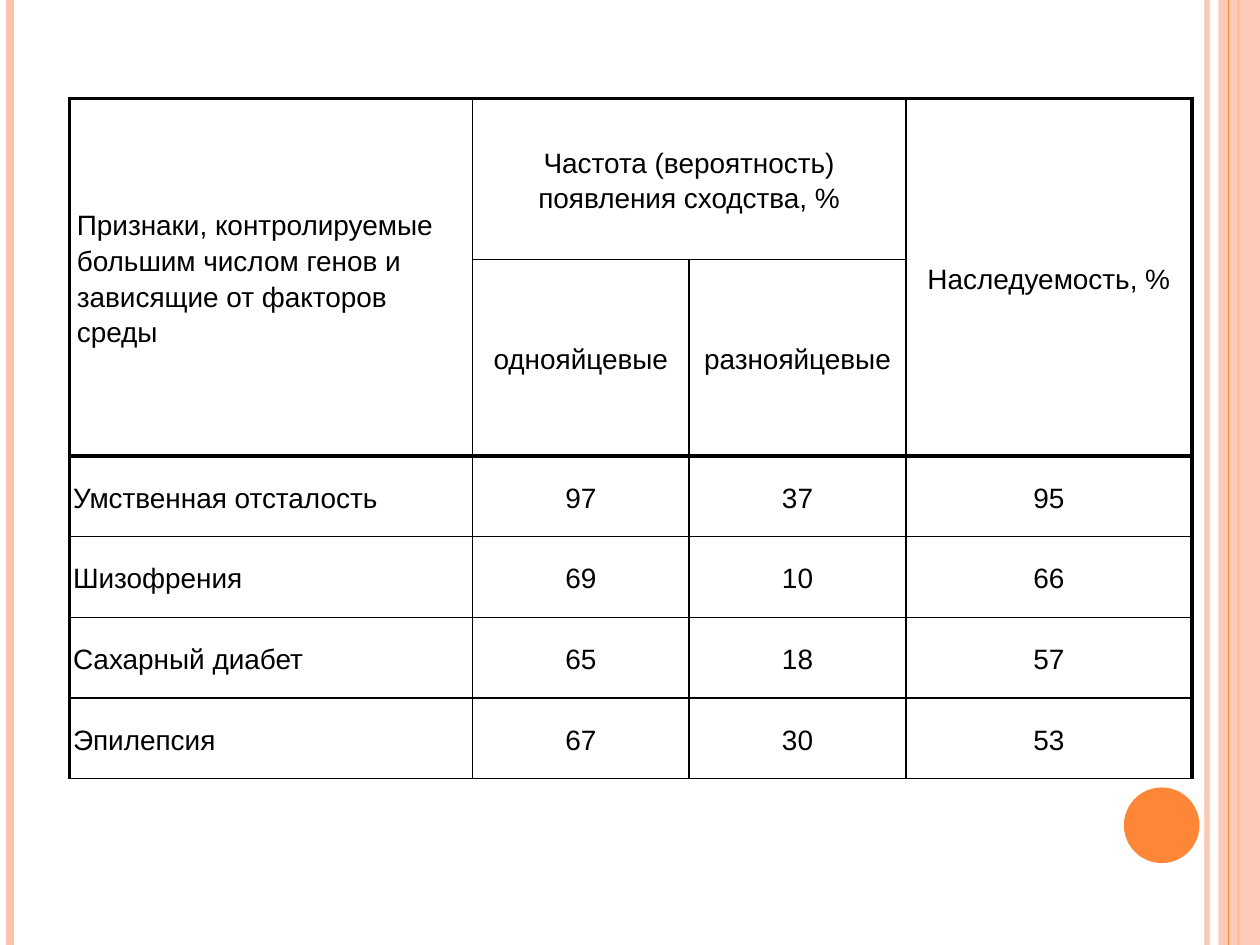
from lxml.etree import SubElement
from pptx import Presentation
from pptx.dml.color import RGBColor
from pptx.enum.shapes import MSO_CONNECTOR, MSO_SHAPE
from pptx.enum.text import MSO_ANCHOR, PP_ALIGN
from pptx.oxml import parse_xml
from pptx.oxml.ns import nsdecls, qn
from pptx.util import Inches, Pt

BLACK = RGBColor(0x00, 0x00, 0x00)
ORANGE = RGBColor(0xFE, 0x86, 0x37)
PEACH = RGBColor(0xFE, 0xC3, 0xAE)

ROWS = [
    ["Признаки, контролируемые большим числом генов и зависящие от факторов среды",
     "Частота (вероятность) появления сходства, %", None, "Наследуемость, %"],
    [None, "однояйцевые", "разнояйцевые", None],
    ["Умственная отсталость", "97", "37", "95"],
    ["Шизофрения", "69", "10", "66"],
    ["Сахарный диабет", "65", "18", "57"],
    ["Эпилепсия", "67", "30", "53"],
]
HEADER_ROWS = 2
MERGES = [((0, 0), (1, 0)), ((0, 1), (0, 2)), ((0, 3), (1, 3))]
COLUMN_WIDTHS = [3.2, 1.72, 1.72, 2.27]
ROW_HEIGHTS = [1.28, 1.56] + [0.64] * 4
TABLE_LEFT, TABLE_TOP = 0.55, 0.78
THIN, THICK = 1, 2.25

SLIDE_WIDTH, SLIDE_HEIGHT = 10, 7.5
# x, colour, width in points, opacity in percent
OUTER_LINES = [(9.58, PEACH, 3, 93), (0.08, PEACH, 4.5, 100), (9.83, ORANGE, 1.5, 100)]
INNER_LINE = (9.75, ORANGE, 0.75, 100)


def set_opacity(fill, percent):
    color = fill._xPr.find(qn("a:solidFill"))[0]
    SubElement(color, qn("a:alpha"), val=str(percent * 1000))


def add_vertical_line(slide, x, color, width, opacity):
    line = slide.shapes.add_connector(
        MSO_CONNECTOR.STRAIGHT, Inches(x), 0, Inches(x), Inches(SLIDE_HEIGHT))
    line.line.color.rgb = color
    line.line.width = Pt(width)
    if opacity < 100:
        set_opacity(line.line.fill, opacity)
    SubElement(line._element.spPr, qn("a:effectLst"))


def add_plain_shape(slide, kind, color, left, top, width, height):
    shape = slide.shapes.add_shape(
        kind, Inches(left), Inches(top), Inches(width), Inches(height))
    shape.shadow.inherit = False
    shape.fill.solid()
    shape.fill.fore_color.rgb = color
    shape.line.fill.background()
    return shape


def set_borders(cell, row, column):
    """Thick lines run around the table and under the header; the bottom edge stays thin."""
    next_row = row + cell.span_height if cell.is_merge_origin else row + 1
    next_column = column + cell.span_width if cell.is_merge_origin else column + 1
    thick_edges = {
        "L": column == 0,
        "R": next_column == len(COLUMN_WIDTHS),
        "T": row in (0, HEADER_ROWS),
        "B": next_row == HEADER_ROWS,
    }
    properties = cell._tc.get_or_add_tcPr()
    for index, (edge, is_thick) in enumerate(thick_edges.items()):
        width = Pt(THICK if is_thick else THIN)
        properties.insert(index, parse_xml(
            f'<a:ln{edge} {nsdecls("a")} w="{width}"><a:solidFill>'
            f'<a:srgbClr val="{BLACK}"/></a:solidFill></a:ln{edge}>'))


def fill_cell(cell, row, column, text):
    cell.text = text
    cell.vertical_anchor = MSO_ANCHOR.MIDDLE
    is_corner = row == column == 0
    side = 0.06 if row == 0 and column in (0, 3) else 0.03
    cell.margin_left = cell.margin_right = Inches(side)
    cell.margin_top = cell.margin_bottom = Inches(0.06 if is_corner else 0)
    paragraph = cell.text_frame.paragraphs[0]
    if is_corner:
        paragraph.alignment = PP_ALIGN.LEFT
    else:
        paragraph.alignment = PP_ALIGN.JUSTIFY if column == 0 else PP_ALIGN.CENTER
    paragraph.line_spacing = 1.15
    paragraph.font.name = "Arial"
    paragraph.font.size = Pt(16)
    paragraph.font.color.rgb = BLACK


def add_twin_table(slide):
    table = slide.shapes.add_table(
        len(ROWS), len(COLUMN_WIDTHS), Inches(TABLE_LEFT), Inches(TABLE_TOP),
        Inches(sum(COLUMN_WIDTHS)), Inches(sum(ROW_HEIGHTS))).table
    table.first_row = table.horz_banding = False
    for column, width in zip(table.columns, COLUMN_WIDTHS):
        column.width = Inches(width)
    for row, height in zip(table.rows, ROW_HEIGHTS):
        row.height = Inches(height)
    for first, last in MERGES:
        table.cell(*first).merge(table.cell(*last))
    for row, texts in enumerate(ROWS):
        for column, text in enumerate(texts):
            cell = table.cell(row, column)
            cell.fill.background()
            if text is not None:
                fill_cell(cell, row, column, text)
                set_borders(cell, row, column)


def main():
    presentation = Presentation()
    presentation.slide_width = Inches(SLIDE_WIDTH)
    presentation.slide_height = Inches(SLIDE_HEIGHT)
    slide = presentation.slides.add_slide(presentation.slide_layouts[6])

    for line in OUTER_LINES:
        add_vertical_line(slide, *line)
    band = add_plain_shape(slide, MSO_SHAPE.RECTANGLE, PEACH, 9.67, 0, 0.33, SLIDE_HEIGHT)
    set_opacity(band.fill, 87)
    add_vertical_line(slide, *INNER_LINE)
    add_plain_shape(slide, MSO_SHAPE.OVAL, ORANGE, 8.92, 6.25, 0.6, 0.6)
    add_twin_table(slide)

    presentation.save("out.pptx")


if __name__ == "__main__":
    main()
